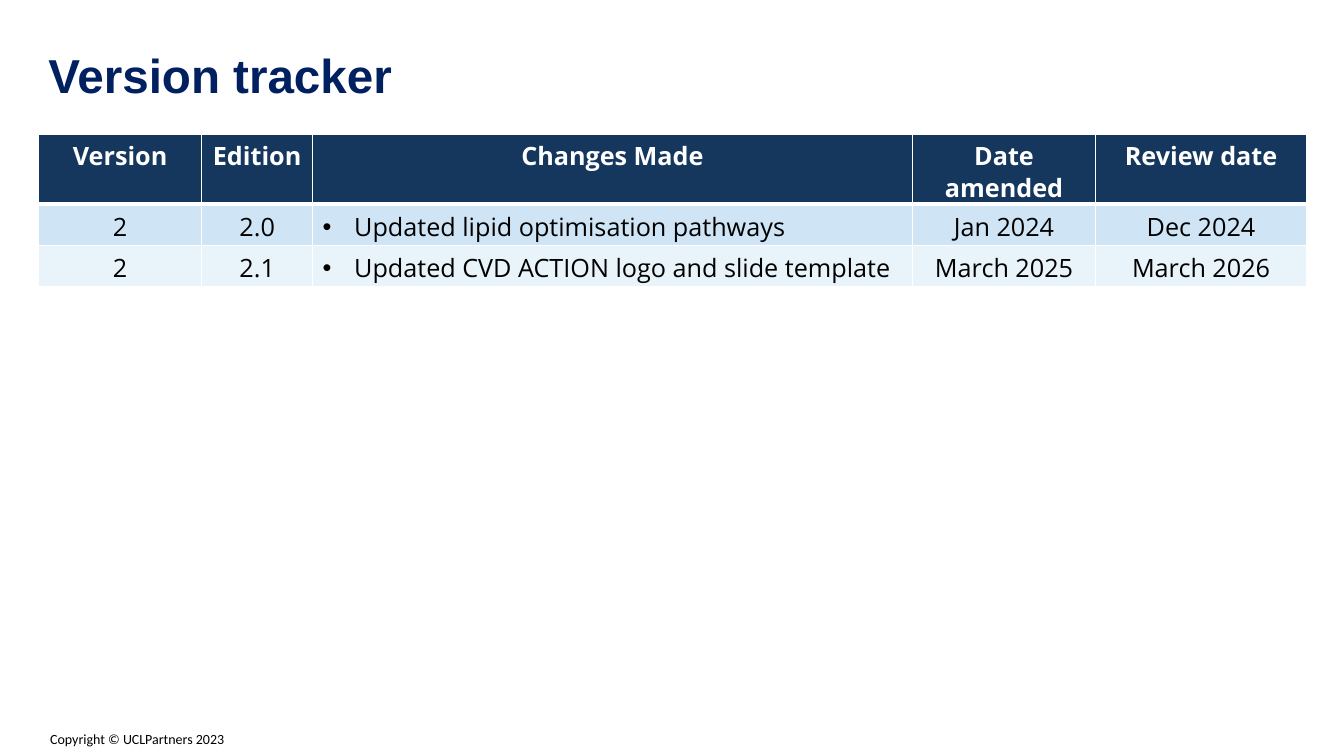
from lxml import etree
from pptx import Presentation
from pptx import util as u
from pptx.dml.color import RGBColor
from pptx.enum import text
from pptx.oxml import ns

Pt = u.Pt
COLOURS = {"navy": "002060", "header": "15375D", "band": "CFE5F5",
           "pale": "E9F3FA", "black": "000000", "white": "FFFFFF"}
COLUMNS = [116.6, 79.2, 428.4, 131, 150.5]
HEIGHTS = [50, 29.5, 29.5]
CHANGES = 2
ROWS = [
    ["Version", "Edition", "Changes Made", "Date amended", "Review date"],
    ["2", "2.0", "Updated lipid optimisation pathways", "Jan 2024", "Dec 2024"],
    ["2", "2.1", "Updated CVD ACTION logo and slide template", "March 2025", "March 2026"],
]


def rgb(name):
    """Return a named colour."""
    return RGBColor.from_string(COLOURS[name])


def add_run(p, words, size, font, colour, bold=False):
    """Add one formatted run to a paragraph."""
    r = p.add_run()
    r.text = words
    r.font.size = Pt(size)
    r.font.name = font
    r.font.bold = bold
    r.font.color.rgb = rgb(colour)


def add_text(s, box, words, size, font, colour, bold=False, wrap=True):
    """Add a single-line text box."""
    tf = s.shapes.add_textbox(*map(Pt, box)).text_frame
    tf.word_wrap = wrap
    add_run(tf.paragraphs[0], words, size, font, colour, bold)


def add_bullet(p, indent):
    """Give a paragraph a round bullet with a hanging indent."""
    pPr = p._p.get_or_add_pPr()
    pPr.set("marL", str(Pt(indent)))
    pPr.set("indent", str(-Pt(indent)))
    etree.SubElement(pPr, ns.qn("a:buFont")).set("typeface", "Arial")
    etree.SubElement(pPr, ns.qn("a:buChar")).set("char", "•")


def add_borders(cell, bottom):
    """Draw white borders around a cell."""
    tcPr = cell._tc.get_or_add_tcPr()
    widths = {"lnL": 1, "lnR": 1, "lnT": 1, "lnB": bottom}
    for tag, width in widths.items():
        ln = etree.SubElement(tcPr, ns.qn("a:" + tag))
        ln.set("w", str(Pt(width)))
        fill = etree.SubElement(ln, ns.qn("a:solidFill"))
        etree.SubElement(fill, ns.qn("a:srgbClr")).set("val", COLOURS["white"])


def fill_cell(cell, words, fill, header, bulleted):
    """Write and style one table cell."""
    add_borders(cell, 3 if header else 1)
    cell.fill.solid()
    cell.fill.fore_color.rgb = rgb(fill)
    cell.margin_top, cell.margin_bottom = Pt(3.6), Pt(0)
    p = cell.text_frame.paragraphs[0]
    if header:
        p.line_spacing = 0.95
    if bulleted:
        add_bullet(p, 22.5)
    else:
        p.alignment = text.PP_ALIGN.CENTER
    add_run(p, words, 18, "Open Sans", "white" if header else "black", header)


def add_version_table(s, left, top):
    """Add the table of versions."""
    table = s.shapes.add_table(len(ROWS), len(COLUMNS), Pt(left), Pt(top),
                               Pt(sum(COLUMNS)), Pt(sum(HEIGHTS))).table
    for column, width in zip(table.columns, COLUMNS):
        column.width = Pt(width)
    for i, (row, fill) in enumerate(zip(ROWS, ["header", "band", "pale"])):
        table.rows[i].height = Pt(HEIGHTS[i])
        for j, words in enumerate(row):
            fill_cell(table.cell(i, j), words, fill, i == 0, i > 0 and j == CHANGES)


def main():
    """Build the version tracker slide."""
    prs = Presentation()
    prs.slide_width, prs.slide_height = Pt(960), Pt(540)
    s = prs.slides.add_slide(prs.slide_layouts[6])
    add_text(s, (28.8, 518.4, 141, 19.4), "Copyright © UCLPartners 2023",
             10, "Calibri", "black", wrap=False)
    add_text(s, (27.5, 29.5, 671, 48.2), "Version tracker", 34, "Arial", "navy", bold=True)
    add_version_table(s, 27.5, 95.8)
    prs.save("out.pptx")


if __name__ == "__main__":
    main()
